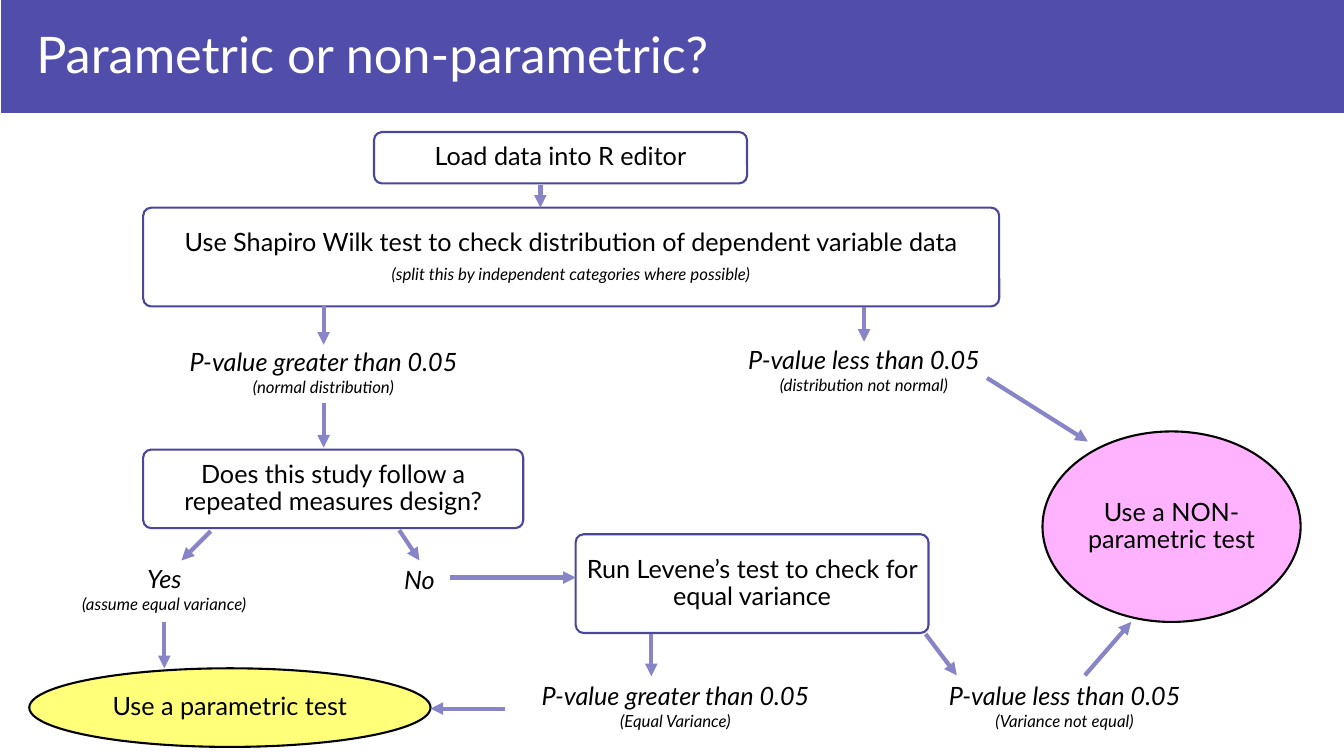
from lxml import etree
from pptx import Presentation
from pptx.dml.color import RGBColor
from pptx.enum.shapes import MSO_CONNECTOR, MSO_SHAPE
from pptx.enum.text import MSO_ANCHOR, MSO_AUTO_SIZE, PP_ALIGN
from pptx.oxml.ns import qn
from pptx.util import Inches, Pt

RECT, ROUNDED, OVAL = MSO_SHAPE.RECTANGLE, MSO_SHAPE.ROUNDED_RECTANGLE, MSO_SHAPE.OVAL
STRAIGHT = MSO_CONNECTOR.STRAIGHT
TOP, MIDDLE = MSO_ANCHOR.TOP, MSO_ANCHOR.MIDDLE
LEFT, CENTER = PP_ALIGN.LEFT, PP_ALIGN.CENTER
FIXED, GROW = MSO_AUTO_SIZE.NONE, MSO_AUTO_SIZE.SHAPE_TO_FIT_TEXT

WHITE = RGBColor(0xFF, 0xFF, 0xFF)
BLACK = RGBColor(0x00, 0x00, 0x00)
VIOLET = RGBColor(0x51, 0x4D, 0xAA)
INDIGO = RGBColor(0x4A, 0x46, 0x9A)
LILAC = RGBColor(0x87, 0x84, 0xC7)
YELLOW = RGBColor(0xFF, 0xFF, 0x79)
PINK = RGBColor(0xFF, 0xB3, 0xFF)

FONT = "Lato"
WIDTH, HEIGHT = 13.33, 7.5
CORNER = 0.08
YES, NORMAL, NO, LOAD = 1.63, 3.21, 4.16, 5.36
EQUAL, SKEWED, UNEQUAL = 6.7, 8.57, 10.56

TITLE = "Parametric or non-parametric?"
STEPS = [
    (ROUNDED, WHITE, INDIGO, (3.71, 1.31, 3.7, 0.51), ["Load data into R editor"]),
    (ROUNDED, WHITE, INDIGO, (1.42, 2.06, 8.49, 0.98),
     ["Use Shapiro Wilk test to check distribution of dependent variable data",
      "(split this by independent categories where possible)"]),
    (ROUNDED, WHITE, INDIGO, (1.42, 4.46, 3.77, 0.78),
     ["Does this study follow a repeated measures design?"]),
    (ROUNDED, WHITE, INDIGO, (5.71, 5.3, 3.5, 0.98),
     ["Run Levene’s test to check for equal variance"]),
    (OVAL, YELLOW, BLACK, (0.29, 6.63, 3.98, 0.78), ["Use a parametric test"]),
    (OVAL, PINK, BLACK, (10.34, 4.28, 2.56, 1.89), ["Use a NON- parametric test"]),
]
OUTCOMES = [
    (SKEWED, 3.37, 3.23, ["P-value less than 0.05", "(distribution not normal)"]),
    (NORMAL, 3.39, 3.5, ["P-value greater than 0.05", "(normal distribution)"]),
    (UNEQUAL, 6.7, 3.23, ["P-value less than 0.05", "(Variance not equal)"]),
    (EQUAL, 6.7, 3.21, ["P-value greater than 0.05", "(Equal Variance)"]),
    (YES, 5.54, 2.14, ["Yes", "(assume equal variance)"]),
    (NO, 5.55, 2.14, ["No"]),
]
ARROWS = [
    ((LOAD, 1.84), (LOAD, 2.06)),
    ((NORMAL, 3.04), (NORMAL, 3.42)),
    ((SKEWED, 3.05), (SKEWED, 3.39)),
    ((9.79, 3.75), (10.79, 4.38)),
    ((NORMAL, 4), (NORMAL, 4.44)),
    ((2.09, 5.27), (1.8, 5.56)),
    ((3.96, 5.26), (NO, 5.56)),
    ((YES, 6.17), (YES, 6.63)),
    ((4.46, 5.73), (5.71, 5.73)),
    ((6.46, 6.29), (6.46, 6.71)),
    ((9.18, 6.29), (9.49, 6.7)),
    ((10.76, 6.7), (11.22, 6.17)),
    ((5.01, 7.03), (4.27, 7.03)),
]


def assign(target, values):
    for name, value in values.items():
        setattr(target, name, value)


def write(frame, lines, sizes, color, frame_format, para_format, all_italic=False, gap=0):
    assign(frame, {"word_wrap": True, **frame_format})
    for index, (line, size) in enumerate(zip(lines, sizes)):
        para = frame.add_paragraph() if index else frame.paragraphs[0]
        assign(para, {**para_format, "space_after": Pt(size * gap)})
        span = para.add_run()
        span.text = line
        assign(span.font, {"name": FONT, "size": Pt(size),
                           "italic": all_italic or index > 0})
        span.font.color.rgb = color


def add_panel(page, kind, fill, line, area, weight):
    panel = page.shapes.add_shape(kind, *map(Inches, area))
    panel.shadow.inherit = False
    panel.fill.solid()
    panel.fill.fore_color.rgb = fill
    panel.line.color.rgb = line
    panel.line.width = Pt(weight)
    return panel


def add_title(page):
    band = add_panel(page, RECT, VIOLET, WHITE, (0, -0.02, WIDTH + 0.03, 1.16), 2)
    title = page.shapes.title
    band._element.addnext(title._element)
    assign(title, dict(zip(("left", "top", "width", "height"),
                           map(Inches, (0.26, 0.18, 9.4, 1.44)))))
    write(title.text_frame, [TITLE], [36], WHITE,
          {"vertical_anchor": TOP, "auto_size": FIXED}, {"alignment": LEFT})


def add_step(page, kind, fill, line, area, lines):
    step = add_panel(page, kind, fill, line, area, 1.5)
    if kind == ROUNDED:
        step.adjustments[0] = CORNER / area[3]
    margins = dict.fromkeys(
        ("margin_left", "margin_top", "margin_right", "margin_bottom"), Inches(0.06))
    write(step.text_frame, lines, (18, 12), BLACK,
          {"vertical_anchor": MIDDLE, **margins},
          {"alignment": CENTER, "line_spacing": 0.9}, gap=0.35)


def add_outcome(page, middle, top, width, lines):
    height = 0.4 if len(lines) == 1 else 0.61
    area = (middle - width / 2, top, width, height)
    box = page.shapes.add_textbox(*map(Inches, area))
    write(box.text_frame, lines, (18, 12), BLACK,
          {"auto_size": GROW}, {"alignment": CENTER}, all_italic=True)


def add_arrow(page, start, end):
    arrow = page.shapes.add_connector(STRAIGHT, *map(Inches, start + end))
    arrow.line.color.rgb = LILAC
    arrow.line.width = Pt(3)
    etree.SubElement(arrow.line._get_or_add_ln(), qn("a:tailEnd"), type="triangle")
    etree.SubElement(arrow._element.spPr, qn("a:effectLst"))


def main():
    deck = Presentation()
    deck.slide_width, deck.slide_height = Inches(WIDTH), Inches(HEIGHT)
    page = deck.slides.add_slide(deck.slide_layouts[5])
    add_title(page)
    for adder, items in ((add_step, STEPS), (add_outcome, OUTCOMES), (add_arrow, ARROWS)):
        for item in items:
            adder(page, *item)
    deck.save("out.pptx")


if __name__ == "__main__":
    main()
